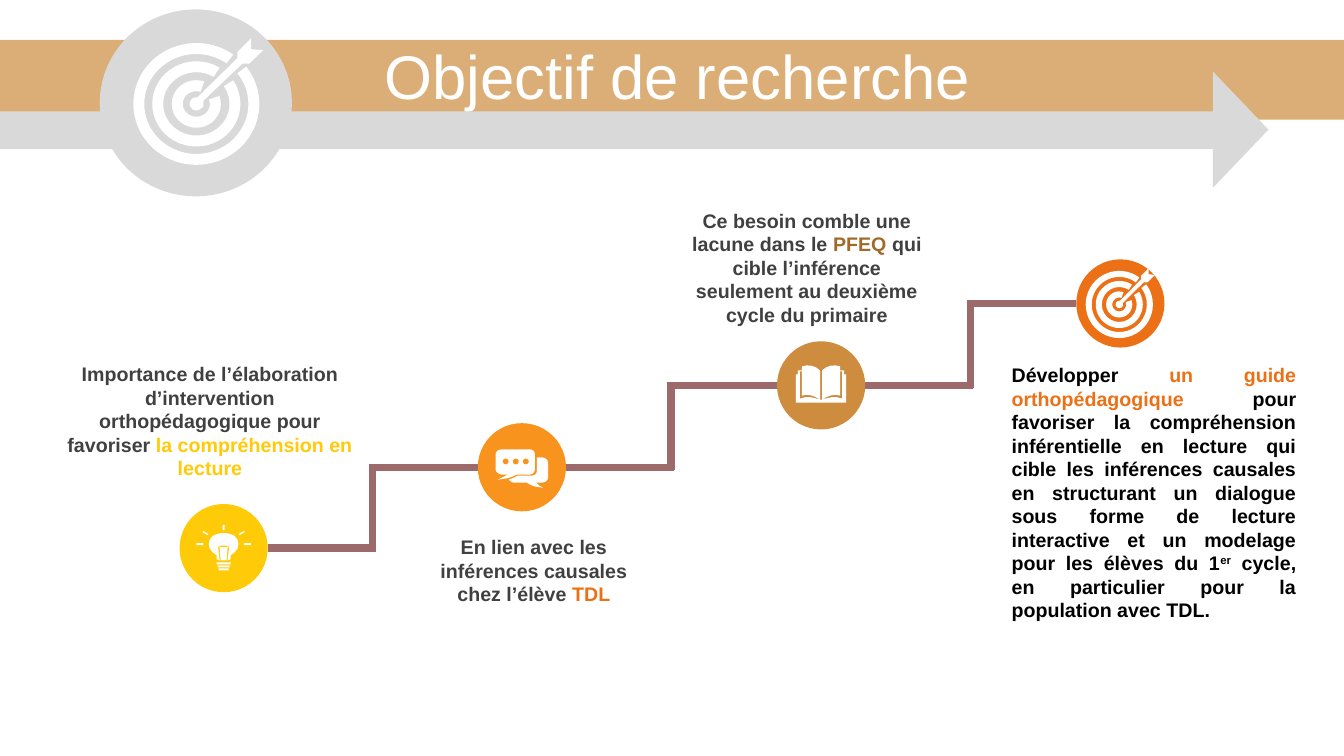
import math
from dataclasses import dataclass
import pptx
import pptx.dml.color
import pptx.enum.shapes
import pptx.enum.text
import pptx.oxml
import pptx.oxml.ns
import pptx.util

PX = 9525
SHAPE = pptx.enum.shapes.MSO_SHAPE
ALIGN = pptx.enum.text.PP_ALIGN
AUTO = pptx.enum.text.MSO_AUTO_SIZE
Contour = list[tuple[float, float]]


@dataclass(frozen=True)
class Theme:
    font: str = "Arial"
    title_pt: int = 44
    body_pt: int = 14
    line_pt: float = 5.25
    white: str = "FFFFFF"
    black: str = "000000"
    text: str = "404040"
    grey: str = "D9D9D9"
    stair: str = "9C6A6A"
    yellow: str = "FFCA08"
    amber: str = "F8931D"
    tan: str = "CE8D3E"
    orange: str = "EC7016"
    brown: str = "A06A29"


@dataclass(frozen=True)
class Note:
    x: int
    y: int
    w: int
    h: int
    align: ALIGN
    spans: tuple[tuple[str, str], ...]


@dataclass(frozen=True)
class Icon:
    x: int
    y: int
    w: int
    h: int
    contours: list[Contour]
    rings: tuple[tuple[int, int], ...] = ()


def outline(*steps: tuple[float, ...]) -> Contour:
    points: Contour = []
    for step in steps:
        if len(step) == 2:
            points.append(step)
            continue
        (x0, y0), (x1, y1, x2, y2, x3, y3) = points[-1], step
        for t in (0.25, 0.5, 0.75, 1):
            a, b, c, d = (1 - t) ** 3, 3 * t * (1 - t) ** 2, 3 * t * t * (1 - t), t ** 3
            points.append((a * x0 + b * x1 + c * x2 + d * x3, a * y0 + b * y1 + c * y2 + d * y3))
    return points


def mirror(contour: Contour) -> Contour:
    return [(-x, y) for x, y in contour]


def bar(x1: int, x2: int, y: int) -> Contour:
    return [(x1, y - 1), (x2, y - 1), (x2, y + 1), (x1, y + 1)]


def circle(x: int, y: int, radius: int) -> Contour:
    return [(x + radius * math.cos(i * math.pi / 6), y + radius * math.sin(i * math.pi / 6)) for i in range(12)]


T = Theme()
GLASS = outline((0, 8), (4, 8, 8, 9, 11, 11), (16, 15, 16, 23, 11, 27), (7, 30), (7, 33), (7, 34, 6, 35, 4, 35))
FILAMENT = [(-4, 35), (-5.5, 22), (-3, 20.5), (3, 20.5), (5.5, 22), (4, 35), (3, 35), (4, 22), (-4, 22), (-3, 35)]
RAYS = [bar(20, 27, 19), [(15, 9), (20, 6), (21, 7), (16, 10)]]
BULB = [GLASS + mirror(GLASS)[::-1], FILAMENT, [(-1, 0), (1, 0), (1, 5), (-1, 5)], *RAYS, *map(mirror, RAYS),
        *(bar(-w, w, y) for w, y in ((5, 44), (6, 41), (7, 38)))]
FRONT = outline((6, 0), (34, 0), (37, 0, 39, 2, 39, 5), (39, 20), (39, 22, 37, 25, 34, 25), (21, 25),
                (15, 28, 12, 29, 2, 30), (8, 27, 9, 27, 12, 25), (6, 25), (3, 25, 0, 22, 0, 20), (0, 5),
                (0, 2, 3, 0, 6, 0))
REAR = outline((41, 8), (46, 8), (49, 8, 52, 10, 52, 13), (52, 28), (52, 31, 49, 33, 46, 33), (40, 33),
               (42, 34, 41, 35, 47, 38), (37, 37, 36, 36, 31, 33), (18, 33), (16, 33, 14, 31, 13, 30),
               (16, 29, 19, 28, 22, 26), (36, 26), (39, 26, 41, 24, 41, 21))
CHAT = [FRONT, REAR, *(circle(x, 12, 3) for x in (10, 20, 30))]
COVER = outline((0, 37), (-25, 37), (-25, 9), (-23, 9), (-23, 5), (-19, 5), (-19, 1), (-13, -1, -6, 0, -1, 5),
                (-1, 34), (0, 34))
CREASE = outline((-21, 6), (-19, 6), (-19, 30), (-13, 28, -7, 30, -1, 34), (-8, 32, -13, 30, -21, 33))
BOOK = [COVER, mirror(COVER), CREASE, mirror(CREASE)]
ARROW = [[(2, -11), (65, -75), (65, -85), (87, -108), (87, -90), (106, -88), (84, -66), (73, -66), (11, -5),
          (11, 4), (6, 9), (0, 11), (-6, 9), (-10, 4), (-11, 0), (-9, -6), (-5, -10)]]
RINGS = ((100, 82), (70, 52), (39, 21))
ICONS = (Icon(213, 500, 96, 96, BULB), Icon(472, 428, 96, 96, CHAT), Icon(782, 348, 96, 96, BOOK),
         Icon(1066, 290, 32, 32, ARROW, RINGS), Icon(187, 99, 60, 58, ARROW, RINGS))
NOTES = (
    Note(50, 340, 300, 123, ALIGN.CENTER, (
        ("Importance de l’élaboration d’intervention orthopédagogique pour favoriser ", T.text),
        ("la compréhension en lecture", T.yellow))),
    Note(389, 505, 239, 78, ALIGN.CENTER, (
        ("En lien avec les inférences causales chez l’élève ", T.text), ("TDL", T.orange))),
    Note(649, 194, 239, 123, ALIGN.CENTER, (
        ("Ce besoin comble une lacune dans le ", T.text), ("PFEQ", T.brown),
        (" qui cible l’inférence seulement au deuxième cycle du primaire", T.text))),
    Note(954, 341, 290, 258, ALIGN.JUSTIFY, (
        ("Développer ", T.black), ("un guide orthopédagogique ", T.orange),
        ("pour favoriser la compréhension inférentielle en lecture qui cible les inférences causales en structurant "
         "un dialogue sous forme de lecture interactive et un modelage pour les élèves du 1", T.black),
        ("er", T.black), (" cycle, en particulier pour la population avec TDL.", T.black))))


def paint(sp, color: str) -> None:
    sp.shadow.inherit = False
    sp.fill.solid()
    sp.fill.fore_color.rgb = pptx.dml.color.RGBColor.from_string(color)
    sp.line.fill.background()


def add_block(s, kind: SHAPE, x: float, y: float, w: float, h: float, color: str):
    sp = s.shapes.add_shape(kind, *(round(v * PX) for v in (x, y, w, h)))
    paint(sp, color)
    return sp


def add_stair(s, x1: int, y1: int, x2: int, y2: int) -> None:
    c = s.shapes.add_connector(pptx.enum.shapes.MSO_CONNECTOR.STRAIGHT, x1 * PX, y1 * PX, x2 * PX, y2 * PX)
    c.line.color.rgb = pptx.dml.color.RGBColor.from_string(T.stair)
    c.line.width = pptx.util.Pt(T.line_pt)
    c.element.spPr.append(pptx.oxml.parse_xml(f'<a:effectLst {pptx.oxml.ns.nsdecls("a")}/>'))


def add_note(s, note: Note) -> None:
    tf = s.shapes.add_textbox(note.x * PX, note.y * PX, note.w * PX, note.h * PX).text_frame
    tf.word_wrap, tf.auto_size = True, AUTO.SHAPE_TO_FIT_TEXT
    p = tf.paragraphs[0]
    p.alignment = note.align
    p.font.name, p.font.size, p.font.bold = T.font, pptx.util.Pt(T.body_pt), True
    for text, color in note.spans:
        r = p.add_run()
        r.text, r.font.color.rgb = text, pptx.dml.color.RGBColor.from_string(color)
        if text == "er":
            r.font._element.set("baseline", "30000")


def add_icon(s, icon: Icon) -> None:
    for outer, inner in icon.rings:
        w, h = icon.w * outer / 100, icon.h * outer / 100
        ring = add_block(s, SHAPE.BLOCK_ARC, icon.x - w, icon.y - h, 2 * w, 2 * h, T.white)
        gap = math.degrees(math.asin(26 / (outer + inner)))
        for i, value in enumerate(((315 + gap) * 0.6, (315 - gap) * 0.6, (outer - inner) / outer / 2)):
            ring.adjustments[i] = value
    fb = s.shapes.build_freeform()
    for contour in icon.contours:
        points = [((icon.x + x * icon.w / 100) * PX, (icon.y + y * icon.h / 100) * PX) for x, y in contour]
        if contour is icon.contours[0]:
            fb = s.shapes.build_freeform(*points[0])
        else:
            fb.move_to(*points[0])
        fb.add_line_segments(points[1:], close=True)
    paint(fb.convert_to_shape(), T.white)


def add_header(s) -> None:
    band, title = add_block(s, SHAPE.RECTANGLE, 0, 38, 1280, 76, T.tan), s.shapes.title
    fill = band.element.spPr.find(".//" + pptx.oxml.ns.qn("a:srgbClr"))
    fill.append(pptx.oxml.parse_xml(f'<a:alpha {pptx.oxml.ns.nsdecls("a")} val="70000"/>'))
    band.element.addnext(title.element)
    title.left, title.top, title.width, title.height = 38 * PX, 38 * PX, 1215 * PX, 76 * PX
    tf = title.text_frame
    tf.text, tf.auto_size = "Objectif de recherche", AUTO.NONE
    tf.vertical_anchor = pptx.enum.text.MSO_ANCHOR.MIDDLE
    p = tf.paragraphs[0]
    p.alignment, p.line_spacing, p.space_before = ALIGN.CENTER, 0.9, pptx.util.Pt(10)
    p.font.name, p.font.size = T.font, pptx.util.Pt(T.title_pt)
    p.font.color.rgb = pptx.dml.color.RGBColor.from_string(T.white)
    add_block(s, SHAPE.RECTANGLE, 0, 106, 1158, 36, T.grey)
    add_block(s, SHAPE.ISOSCELES_TRIANGLE, 1126, 97, 111, 53, T.grey).rotation = 90
    add_block(s, SHAPE.OVAL, 95, 9, 183, 178, T.grey)


def add_staircase(s) -> None:
    radius, overlap = 42, 3
    centres = [(213 + i * 854 // 3, 522 - i * 233 // 3) for i in range(4)]
    risers = [(a[0] + b[0]) // 2 for a, b in zip(centres, centres[1:])]
    lefts = [centres[0][0] + radius] + [x - overlap for x in risers]
    rights = [x + overlap for x in risers] + [centres[-1][0] - radius]
    for left, right, (_, y) in zip(lefts, rights, centres):
        add_stair(s, left, y, right, y)
    for x, (_, low), (_, high) in zip(risers, centres, centres[1:]):
        add_stair(s, x, high - overlap, x, low + overlap)
    for (x, y), color in zip(centres, (T.yellow, T.amber, T.tan, T.orange)):
        add_block(s, SHAPE.OVAL, x - radius, y - radius, 2 * radius, 2 * radius, color)


prs = pptx.Presentation()
prs.slide_width, prs.slide_height = 1280 * PX, 720 * PX
s = prs.slides.add_slide(prs.slide_layouts[5])
add_header(s)
add_staircase(s)
for note in NOTES:
    add_note(s, note)
for icon in ICONS:
    add_icon(s, icon)
prs.save("out.pptx")
